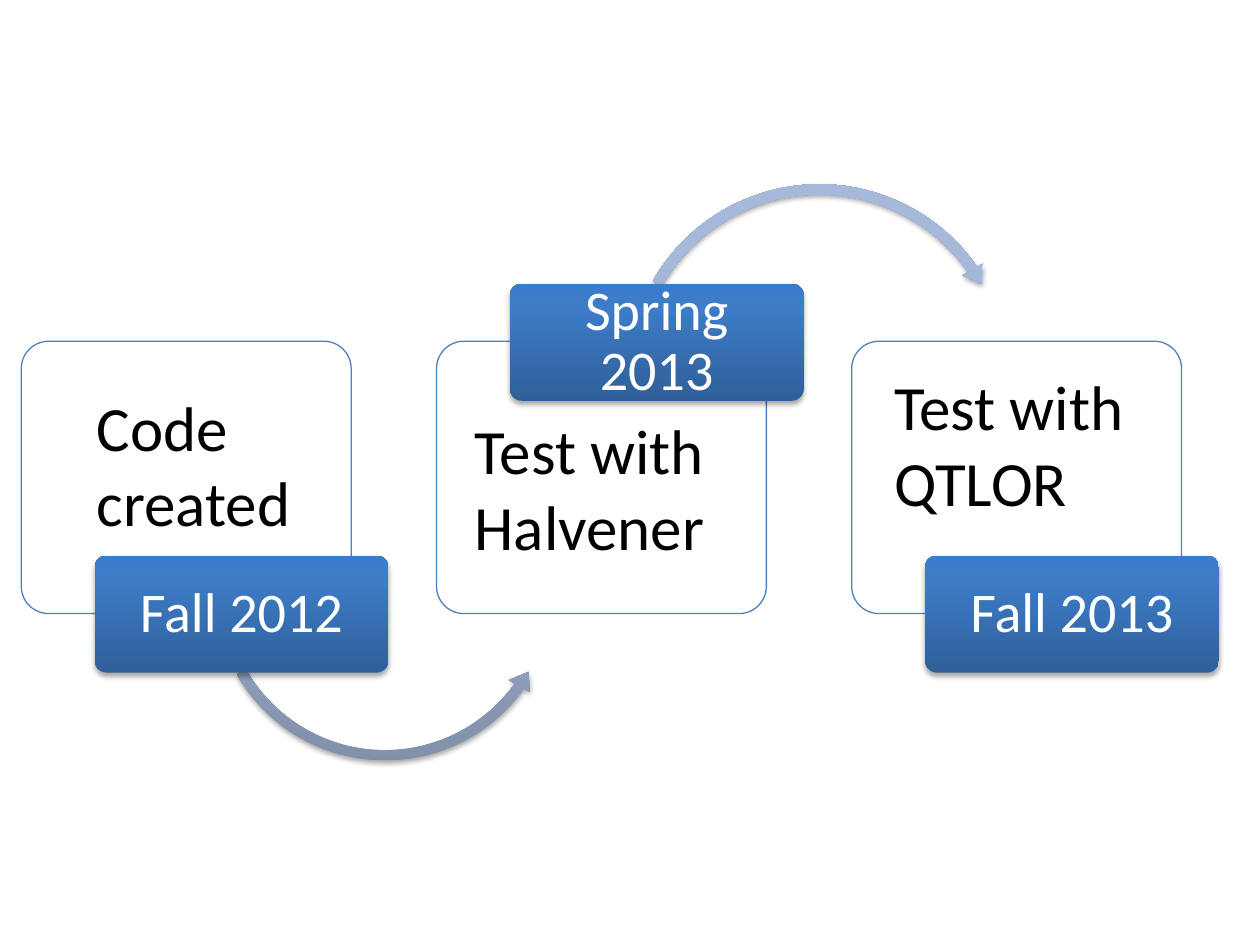
from dataclasses import dataclass

from lxml.etree import SubElement
from pptx import Presentation
from pptx.dml.color import RGBColor
from pptx.enum.shapes import MSO_SHAPE
from pptx.enum.text import MSO_ANCHOR, MSO_AUTO_SIZE, PP_ALIGN
from pptx.oxml.ns import qn
from pptx.util import Cm, Pt


@dataclass(frozen=True)
class Theme:
    font: str = "Calibri"
    caption_size: int = 36
    date_size: int = 32
    caption_color: str = "000000"
    date_color: str = "FFFFFF"
    card_fill: str = "FFFFFF"
    card_line: str = "4F81BD"
    shadow_color: str = "000000"
    date_gradient: tuple = ((0, "2F5F99"), (80, "3D7CC7"), (100, "3A7CCB"))
    arrow_gradient: tuple = ((0, "818FA8"), (80, "A7B9DA"), (100, "A7BADC"))


THEME = Theme()
FIRST_LEFT = 0.43
STAGE_PITCH = 8.37
CARD_TOP = 6.88
DATE_OFFSET = 1.48
DATE_TOP_HIGH = 5.72
DATE_TOP_LOW = 11.2

STAGES = (
    ("Fall 2012", DATE_TOP_LOW,
     (MSO_SHAPE.LEFT_CIRCULAR_ARROW, 4.19, 8.33, 7.14,
      (0.029, 3.53, 21.285, 90.245, 0.034))),
    ("Spring 2013", DATE_TOP_HIGH,
     (MSO_SHAPE.CIRCULAR_ARROW, 12.52, 3.58, 8.0,
      (0.026, 3.132, 195.113, 125.755, 0.03))),
    ("Fall 2013", DATE_TOP_LOW, None),
)

CAPTIONS = (
    ("Code\ncreated", 1.7, 7.7, 5.72),
    ("Test with Halvener", 9.32, 8.18, 5.72),
    ("Test with QTLOR", 17.78, 7.29, 6.15),
)


def add_color(parent, color, alpha=None):
    node = SubElement(parent, qn("a:srgbClr"), val=color)
    if alpha is not None:
        SubElement(node, qn("a:alpha"), val=str(alpha * 1000))


def style_text(text_frame, size, color):
    for para in text_frame.paragraphs:
        for span in para.runs:
            span.font.name = THEME.font
            span.font.size = Pt(size)
            span.font.color.rgb = RGBColor.from_string(color)


def add_shape(page, kind, left, top, width, height, adjustments):
    shape = page.shapes.add_shape(kind, Cm(left), Cm(top), Cm(width), Cm(height))
    for index, value in enumerate(adjustments):
        shape.adjustments[index] = value
    shape.shadow.inherit = False
    return shape


def add_raised_shape(page, kind, left, top, width, height, adjustments, gradient):
    shape = add_shape(page, kind, left, top, width, height, adjustments)
    shape.fill.gradient()
    shape.fill.gradient_angle = 90
    stops = shape.element.spPr.find(".//" + qn("a:gsLst"))
    stops.clear()
    for position, color in gradient:
        stop = SubElement(stops, qn("a:gs"), pos=str(position * 1000))
        add_color(stop, color)
    shape.line.fill.background()
    effects = shape.element.spPr.find(qn("a:effectLst"))
    shadow = SubElement(effects, qn("a:outerShdw"), blurRad=str(Pt(3.1)),
                        dist=str(Pt(1.8)), dir="5400000", rotWithShape="0")
    add_color(shadow, THEME.shadow_color, 35)
    return shape


def add_card(page, left):
    card = add_shape(page, MSO_SHAPE.ROUNDED_RECTANGLE, left, CARD_TOP, 6.65, 5.49, (0.1,))
    card.fill.solid()
    card.fill.fore_color.rgb = RGBColor.from_string(THEME.card_fill)
    color = card.element.spPr.find(qn("a:solidFill")).find(qn("a:srgbClr"))
    SubElement(color, qn("a:alpha"), val="90000")
    card.line.color.rgb = RGBColor.from_string(THEME.card_line)
    card.line.width = Pt(0.75)


def add_arrow(page, kind, left, top, size, adjustments):
    add_raised_shape(page, kind, left, top, size, size, adjustments, THEME.arrow_gradient)


def add_date(page, text, left, top):
    box = add_raised_shape(page, MSO_SHAPE.ROUNDED_RECTANGLE, left, top, 5.92, 2.36,
                           (0.1,), THEME.date_gradient)
    frame = box.text_frame
    frame.text = text
    frame.word_wrap = True
    frame.vertical_anchor = MSO_ANCHOR.MIDDLE
    frame.margin_left = frame.margin_right = Cm(0.25)
    frame.margin_top = frame.margin_bottom = Cm(0.18)
    frame.paragraphs[0].alignment = PP_ALIGN.CENTER
    frame.paragraphs[0].line_spacing = 0.9
    style_text(frame, THEME.date_size, THEME.date_color)


def add_caption(page, text, left, top, width):
    box = page.shapes.add_textbox(Cm(left), Cm(top), Cm(width), Cm(3.33))
    frame = box.text_frame
    frame.text = text
    frame.word_wrap = True
    frame.auto_size = MSO_AUTO_SIZE.SHAPE_TO_FIT_TEXT
    style_text(frame, THEME.caption_size, THEME.caption_color)


def main():
    deck = Presentation()
    deck.slide_width, deck.slide_height = Cm(25.4), Cm(19.05)
    page = deck.slides.add_slide(deck.slide_layouts[6])
    for index, (date, date_top, arrow) in enumerate(STAGES):
        left = FIRST_LEFT + index * STAGE_PITCH
        add_card(page, left)
        if arrow:
            add_arrow(page, *arrow)
        add_date(page, date, left + DATE_OFFSET, date_top)
    for caption in CAPTIONS:
        add_caption(page, *caption)
    deck.save("out.pptx")


if __name__ == "__main__":
    main()
